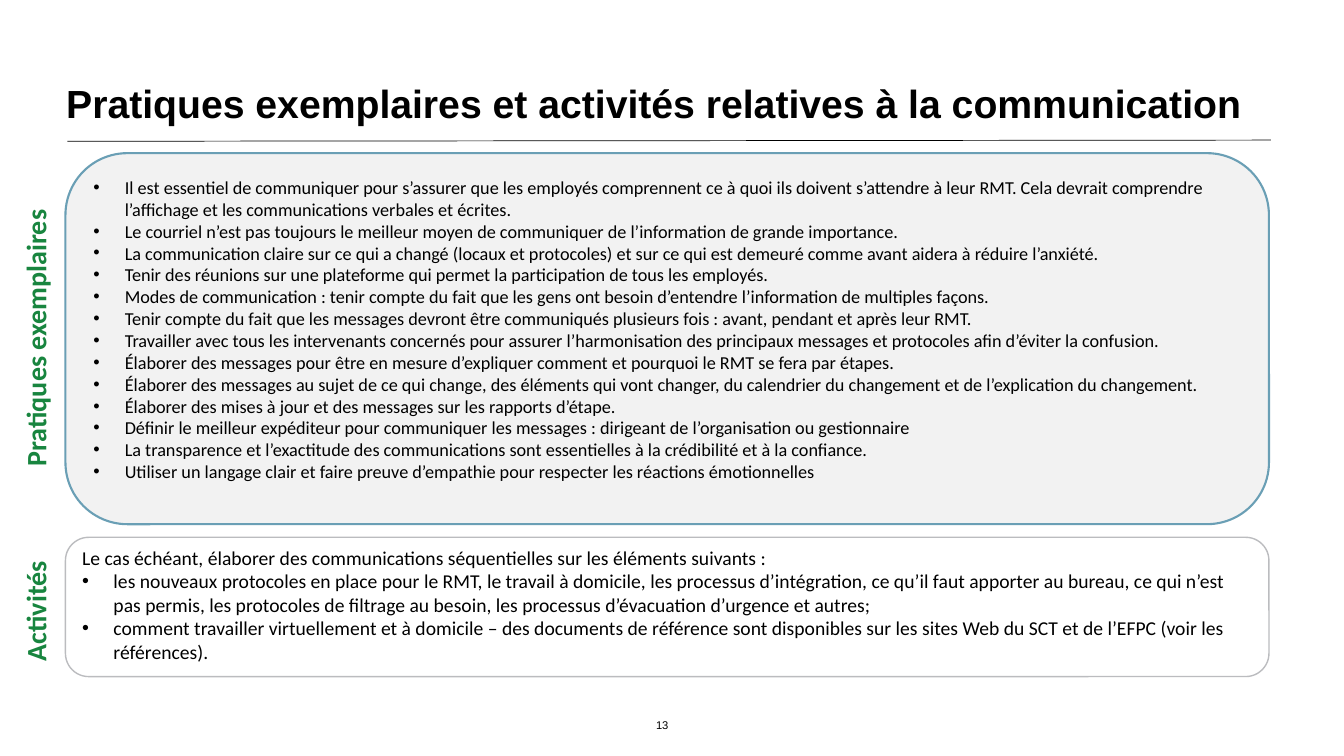
from lxml.etree import SubElement
from pptx import Presentation
from pptx.dml.color import RGBColor
from pptx.enum.shapes import MSO_CONNECTOR, MSO_SHAPE
from pptx.enum.text import MSO_ANCHOR, PP_ALIGN
from pptx.oxml.ns import qn
from pptx.util import Cm, Pt

BLACK = RGBColor(0x00, 0x00, 0x00)
WHITE = RGBColor(0xFF, 0xFF, 0xFF)
GREEN = RGBColor(0x18, 0x85, 0x3F)
GREY_FILL = RGBColor(0xF2, 0xF2, 0xF2)
GREY_LINE = RGBColor(0xBB, 0xBC, 0xBF)
BLUE_LINE = RGBColor(0x6A, 0x9F, 0xB5)

LEFT, WIDTH = 1.65, 30.33
LABEL_X, LABEL_HEIGHT = 0.9, 1.12

PRACTICES = [
    "Il est essentiel de communiquer pour s’assurer que les employés comprennent ce à quoi ils doivent s’attendre à leur RMT. Cela devrait comprendre l’affichage et les communications verbales et écrites.",
    "Le courriel n’est pas toujours le meilleur moyen de communiquer de l’information de grande importance.",
    "La communication claire sur ce qui a changé (locaux et protocoles) et sur ce qui est demeuré comme avant aidera à réduire l’anxiété.",
    "Tenir des réunions sur une plateforme qui permet la participation de tous les employés.",
    "Modes de communication : tenir compte du fait que les gens ont besoin d’entendre l’information de multiples façons.",
    "Tenir compte du fait que les messages devront être communiqués plusieurs fois : avant, pendant et après leur RMT.",
    "Travailler avec tous les intervenants concernés pour assurer l’harmonisation des principaux messages et protocoles afin d’éviter la confusion.",
    "Élaborer des messages pour être en mesure d’expliquer comment et pourquoi le RMT se fera par étapes.",
    "Élaborer des messages au sujet de ce qui change, des éléments qui vont changer, du calendrier du changement et de l’explication du changement.",
    "Élaborer des mises à jour et des messages sur les rapports d’étape.",
    "Définir le meilleur expéditeur pour communiquer les messages : dirigeant de l’organisation ou gestionnaire",
    "La transparence et l’exactitude des communications sont essentielles à la crédibilité et à la confiance.",
    "Utiliser un langage clair et faire preuve d’empathie pour respecter les réactions émotionnelles",
]
ACTIVITIES_INTRO = "Le cas échéant, élaborer des communications séquentielles sur les éléments suivants :"
ACTIVITIES = [
    "les nouveaux protocoles en place pour le RMT, le travail à domicile, les processus d’intégration, ce qu’il faut apporter au bureau, ce qui n’est pas permis, les protocoles de filtrage au besoin, les processus d’évacuation d’urgence et autres;",
    "comment travailler virtuellement et à domicile – des documents de référence sont disponibles sur les sites Web du SCT et de l’EFPC (voir les références).",
]


def add_text(tf, text, size, font="Calibri", color=BLACK, bold=False,
             align=PP_ALIGN.LEFT, bullet=False, spacing=None):
    """Fill the empty first paragraph, or append a new one."""
    p = tf.paragraphs[-1]
    if p.runs:
        p = tf.add_paragraph()
    p.alignment = align
    if spacing:
        p.line_spacing = spacing
    if bullet:
        pPr = p._p.get_or_add_pPr()
        pPr.set("marL", str(Cm(0.79)))
        pPr.set("indent", str(-Cm(0.79)))
        SubElement(pPr, qn("a:buFont")).set("typeface", "Arial")
        SubElement(pPr, qn("a:buChar")).set("char", "•")
    r = p.add_run()
    r.text = text
    r.font.size, r.font.name, r.font.bold = Pt(size), font, bold
    r.font.color.rgb = color


def add_label(s, x, y, w, h, text, size, rotation=0, anchor=MSO_ANCHOR.TOP, **fmt):
    sp = s.shapes.add_textbox(Cm(x), Cm(y), Cm(w), Cm(h))
    sp.rotation = rotation
    tf = sp.text_frame
    tf.word_wrap = True
    tf.vertical_anchor = anchor
    add_text(tf, text, size, **fmt)


def add_header(s, x, y, w, h, title):
    add_label(s, x - 0.23, y, w + 0.25, h, title, 28, font="Arial", bold=True,
              anchor=MSO_ANCHOR.MIDDLE, spacing=0.9)
    # Rule under the title
    rule = s.shapes.add_connector(MSO_CONNECTOR.STRAIGHT, Cm(x + 0.05), Cm(y + 2.04),
                                  Cm(x + w + 0.05), Cm(y + 2.01))
    rule.line.color.rgb = BLACK
    rule.line.width = Pt(0.5)
    SubElement(rule._element.spPr, qn("a:effectLst"))


def add_section(s, x, y, w, h, label, items, size, fill, line, line_width,
                label_length, label_shift=0, intro=None):
    # Rounded panel
    sp = s.shapes.add_shape(MSO_SHAPE.ROUNDED_RECTANGLE, Cm(x), Cm(y), Cm(w), Cm(h))
    sp.shadow.inherit = False
    sp.fill.solid()
    sp.fill.fore_color.rgb = fill
    sp.line.color.rgb = line
    sp.line.width = Pt(line_width)
    tf = sp.text_frame
    tf.word_wrap = True
    tf.vertical_anchor = MSO_ANCHOR.TOP
    if intro:
        add_text(tf, intro, size, spacing=Pt(14.3))
    for item in items:
        add_text(tf, item, size, bullet=True)
    # Vertical label in the left margin
    add_label(s, LABEL_X - label_length / 2, y + h / 2 + label_shift - LABEL_HEIGHT / 2,
              label_length, LABEL_HEIGHT, label, 20, rotation=270, color=GREEN, bold=True)


def main():
    prs = Presentation()
    prs.slide_width, prs.slide_height = Cm(33.87), Cm(19.05)
    s = prs.slides.add_slide(prs.slide_layouts[6])

    add_header(s, LEFT, 1.52, WIDTH, 2.31,
               "Pratiques exemplaires et activités relatives à la communication")
    add_section(s, LEFT, 3.86, WIDTH, 9.35, "Pratiques exemplaires", PRACTICES, 13,
                GREY_FILL, BLUE_LINE, 1.5, label_length=8.15, label_shift=-0.61)
    add_section(s, LEFT, 13.54, WIDTH, 3.51, "Activités", ACTIVITIES, 14,
                WHITE, GREY_LINE, 1, label_length=3.23, intro=ACTIVITIES_INTRO)
    # Page number
    add_label(s, 16.18, 17.93, 1.02, 0.69, "13", 8, font="Arial",
              align=PP_ALIGN.CENTER, anchor=MSO_ANCHOR.MIDDLE)

    prs.save("out.pptx")


if __name__ == "__main__":
    main()
